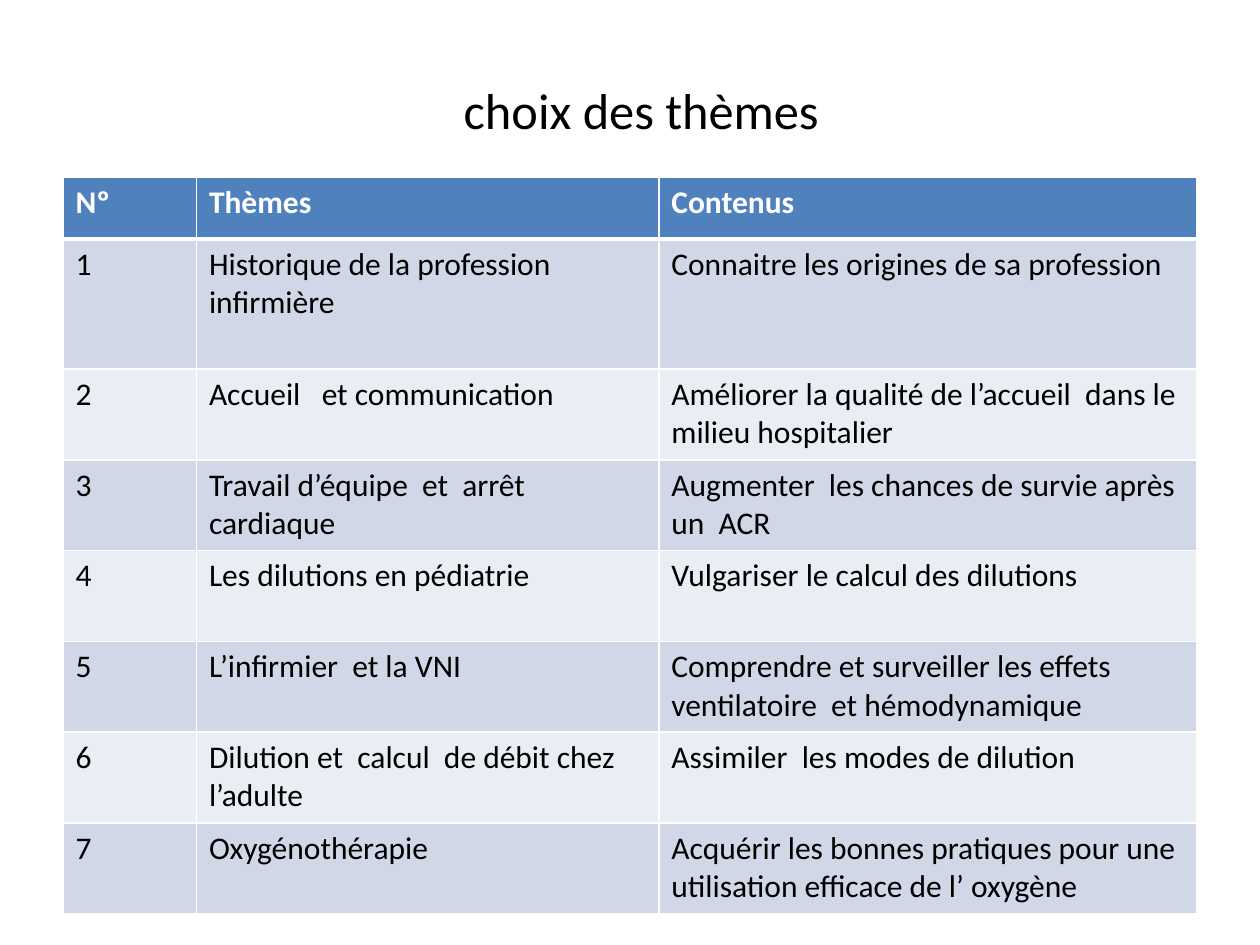
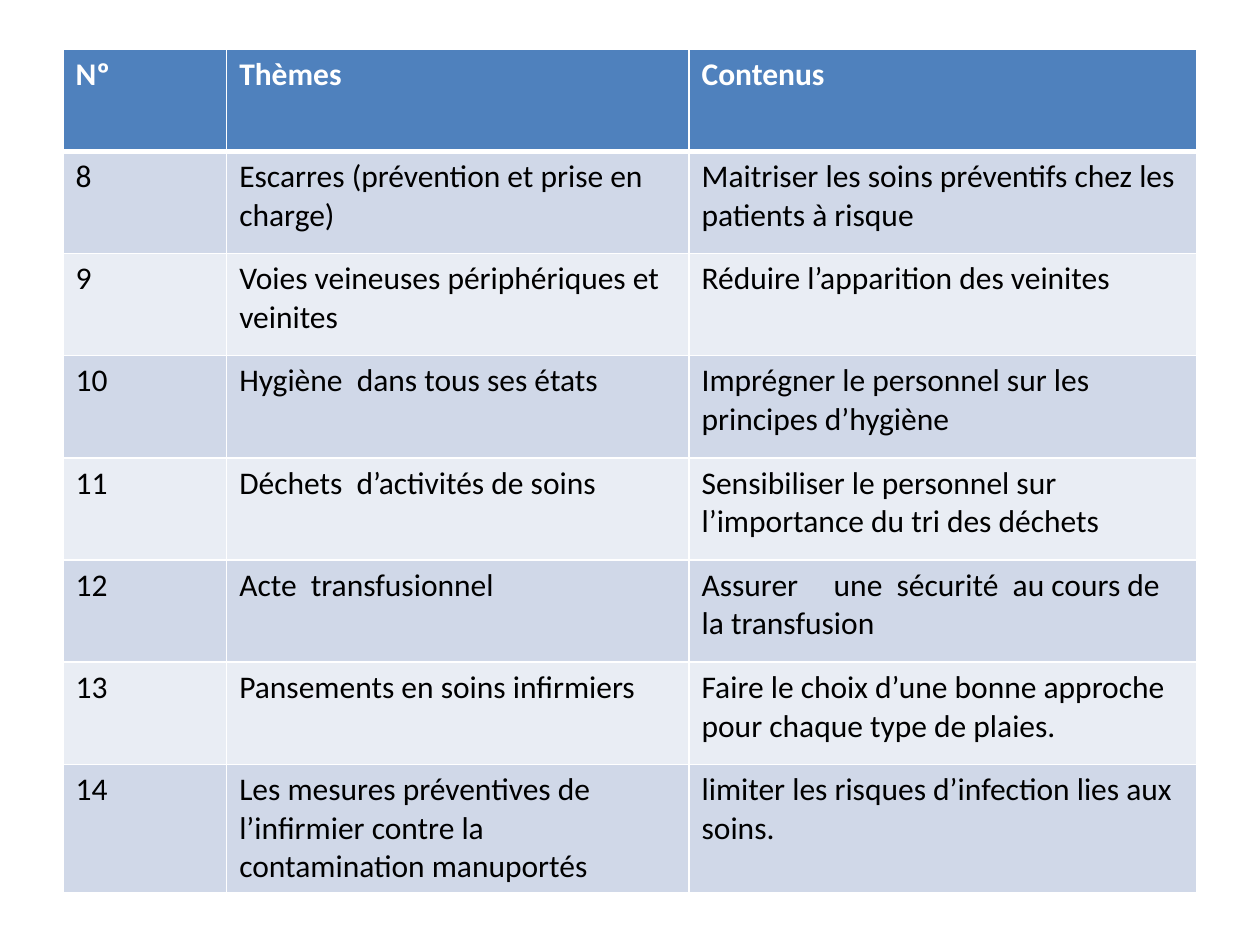
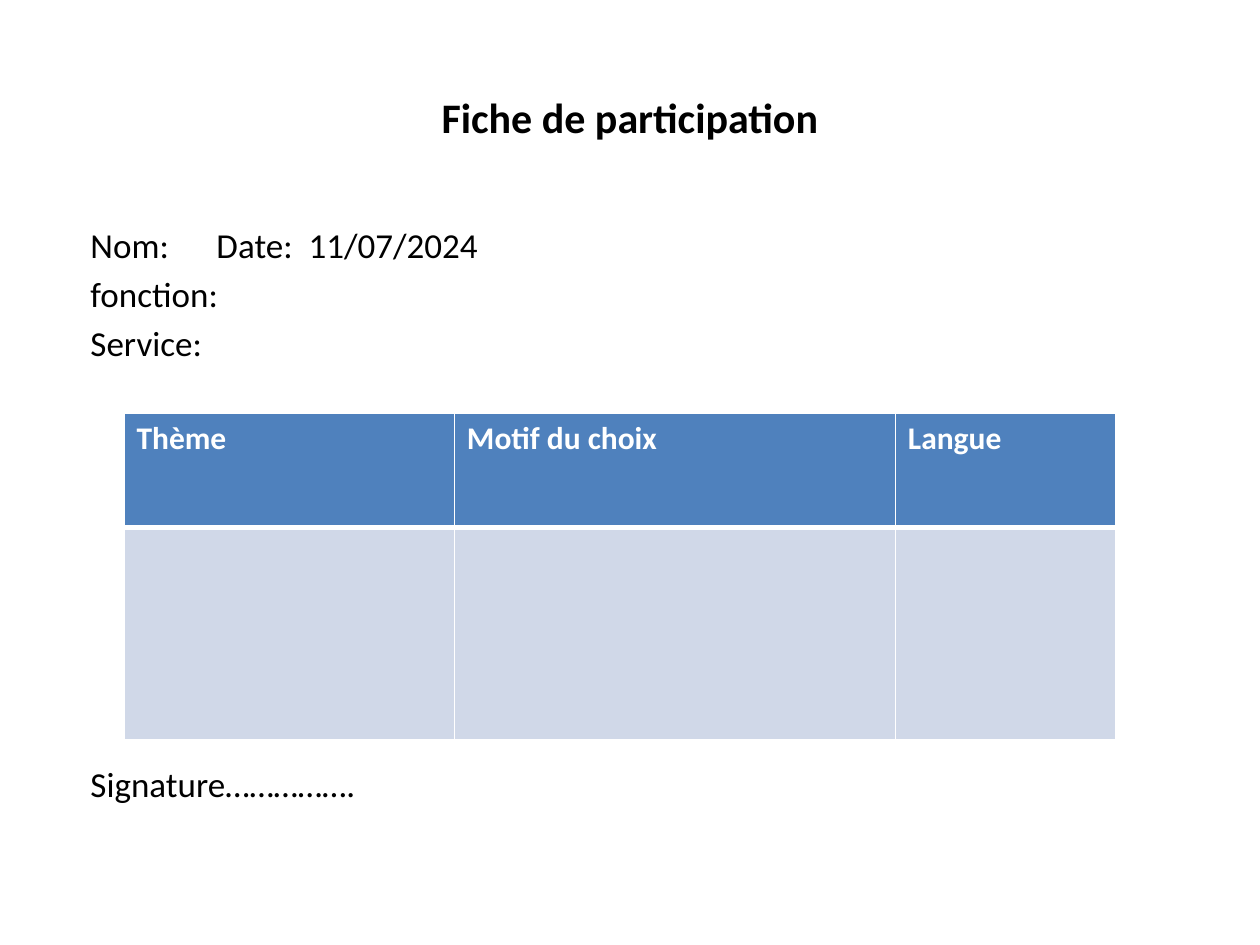
"""Build three slides: two tables of training themes and a participation form."""
from lxml import etree
from pptx import Presentation
from pptx.dml.color import RGBColor
from pptx.enum.text import MSO_ANCHOR, MSO_AUTO_SIZE, PP_ALIGN
from pptx.oxml.ns import qn
from pptx.util import Cm, Pt

MIDDLE, TOP = MSO_ANCHOR.MIDDLE, MSO_ANCHOR.TOP
NO_AUTOFIT = MSO_AUTO_SIZE.NONE
CENTER, LEFT = PP_ALIGN.CENTER, PP_ALIGN.LEFT
TITLE_ONLY, BLANK, TITLE_AND_BODY = 5, 6, 1

THEME = {
    "font": "Calibri",
    "text": RGBColor.from_string("000000"),
    "header_text": RGBColor.from_string("FFFFFF"),
    "header": RGBColor.from_string("4F81BD"),
    "bands": [RGBColor.from_string("D0D8E8"), RGBColor.from_string("E9EDF4")],
    "border": "FFFFFF",
    "thin": Pt(1),
    "thick": Pt(3),
    "title": Pt(28.8),
    "form_title": Pt(24),
    "form": Pt(20),
    "cell": Pt(18),
}


def fill_frame(holder, box, lines, size, bold=False, align=LEFT, anchor=TOP):
    """Place a placeholder and give its lines one format."""
    holder.left, holder.top, holder.width, holder.height = [Cm(length) for length in box]
    frame = holder.text_frame
    frame.text = "\n".join(lines)
    for key, value in {"word_wrap": True, "auto_size": NO_AUTOFIT, "vertical_anchor": anchor}.items():
        setattr(frame, key, value)
    for paragraph in frame.paragraphs:
        paragraph.alignment = align
        for key, value in {"name": THEME["font"], "size": size, "bold": bold}.items():
            setattr(paragraph.runs[0].font, key, value)
        paragraph.runs[0].font.color.rgb = THEME["text"]


def add_banded_table(slide, left, top, widths, heights, rows):
    """Add a table with a header row, banded rows and white borders."""
    table = slide.shapes.add_table(
        len(rows), len(widths), Cm(left), Cm(top), Cm(sum(widths)), Cm(sum(heights))
    ).table
    for column, width in zip(table.columns, widths):
        column.width = Cm(width)
    for index, (row, height, values) in enumerate(zip(table.rows, heights, rows)):
        row.height = Cm(height)
        is_header = index == 0
        edges = {
            "a:lnL": THEME["thin"],
            "a:lnR": THEME["thin"],
            "a:lnT": THEME["thick"] if index == 1 else THEME["thin"],
            "a:lnB": THEME["thick"] if is_header else THEME["thin"],
        }
        for cell, value in zip(row.cells, values):
            cell.text = value
            properties = cell._tc.get_or_add_tcPr()
            for edge, weight in edges.items():
                line = etree.SubElement(properties, qn(edge), w=str(int(weight)))
                solid = etree.SubElement(line, qn("a:solidFill"))
                etree.SubElement(solid, qn("a:srgbClr"), val=THEME["border"])
            cell.fill.solid()
            cell.fill.fore_color.rgb = THEME["header"] if is_header else THEME["bands"][(index - 1) % 2]
            for run in cell.text_frame.paragraphs[0].runs:
                for key, setting in {"name": THEME["font"], "size": THEME["cell"], "bold": is_header}.items():
                    setattr(run.font, key, setting)
                run.font.color.rgb = THEME["header_text"] if is_header else THEME["text"]


themes_header = ("Nº", "Thèmes", "Contenus")
first_themes = [
    ("1", "Historique de la profession infirmière", "Connaitre les origines de sa profession"),
    ("2", "Accueil   et communication", "Améliorer la qualité de l’accueil  dans le milieu hospitalier"),
    ("3", "Travail d’équipe  et  arrêt cardiaque", "Augmenter  les chances de survie après un  ACR"),
    ("4", "Les dilutions en pédiatrie", "Vulgariser le calcul des dilutions"),
    ("5", "L’infirmier  et la VNI", "Comprendre et surveiller les effets ventilatoire  et hémodynamique"),
    ("6", "Dilution et  calcul  de débit chez l’adulte", "Assimiler  les modes de dilution"),
    ("7", "Oxygénothérapie", "Acquérir les bonnes pratiques pour une utilisation efficace de l’ oxygène"),
]
last_themes = [
    ("8", "Escarres (prévention et prise en charge)", "Maitriser les soins préventifs chez les patients à risque"),
    ("9", "Voies veineuses périphériques et veinites", "Réduire l’apparition des veinites"),
    ("10", "Hygiène  dans tous ses états", "Imprégner le personnel sur les principes d’hygiène"),
    ("11", "Déchets  d’activités de soins", "Sensibiliser le personnel sur l’importance du tri des déchets"),
    ("12", "Acte  transfusionnel", "Assurer     une  sécurité  au cours de la transfusion"),
    ("13", "Pansements en soins infirmiers", "Faire le choix d’une bonne approche pour chaque type de plaies."),
    ("14", "Les mesures préventives de l’infirmier contre la contamination manuportés",
     "limiter les risques d’infection lies aux soins."),
]

deck = Presentation()
deck.slide_width, deck.slide_height = Cm(25.4), Cm(19.05)
layouts = deck.slide_layouts

choice = deck.slides.add_slide(layouts[TITLE_ONLY])
fill_frame(choice.shapes.title, (1.5, 0.76, 22.86, 2.9), ["choix des thèmes"],
           THEME["title"], align=CENTER, anchor=MIDDLE)
add_banded_table(choice, 1.27, 3.58, [2.69, 9.32, 10.85], [1.24, 2.62] + [1.83] * 6,
                 [themes_header] + first_themes)

choice_end = deck.slides.add_slide(layouts[BLANK])
add_banded_table(choice_end, 1.27, 0.99, [3.3, 9.32, 10.24], [2.06] * 8,
                 [themes_header] + last_themes)

form = deck.slides.add_slide(layouts[TITLE_AND_BODY])
fill_frame(form.shapes.title, (1.27, 0.76, 22.86, 3.18), ["Fiche de participation"],
           THEME["form_title"], bold=True, align=CENTER, anchor=MIDDLE)
fields = form.placeholders[1]
fill_frame(fields, (1.57, 4.37, 22.86, 12.57),
           ["Nom:\tDate:  11/07/2024", "fonction:", "Service:", "Signature……………."], THEME["form"])
for field in fields.text_frame.paragraphs:
    field.space_before = Pt(4)
    layout = field._p.get_or_add_pPr()
    layout.set("marL", "0")
    layout.set("indent", "0")
    etree.SubElement(layout, qn("a:buNone"))
    tabs = etree.SubElement(layout, qn("a:tabLst"))
    etree.SubElement(tabs, qn("a:tab"), pos=str(int(Cm(13.23))), algn="l")
signature = fields.text_frame.paragraphs[-1]
signature.space_before = Pt(228)
add_banded_table(form, 2.5, 8.33, [6.66, 8.89, 4.44], [2.31, 4.27],
                 [("Thème", "Motif du choix", "Langue"), ("", "", "")])

deck.save("out.pptx")
